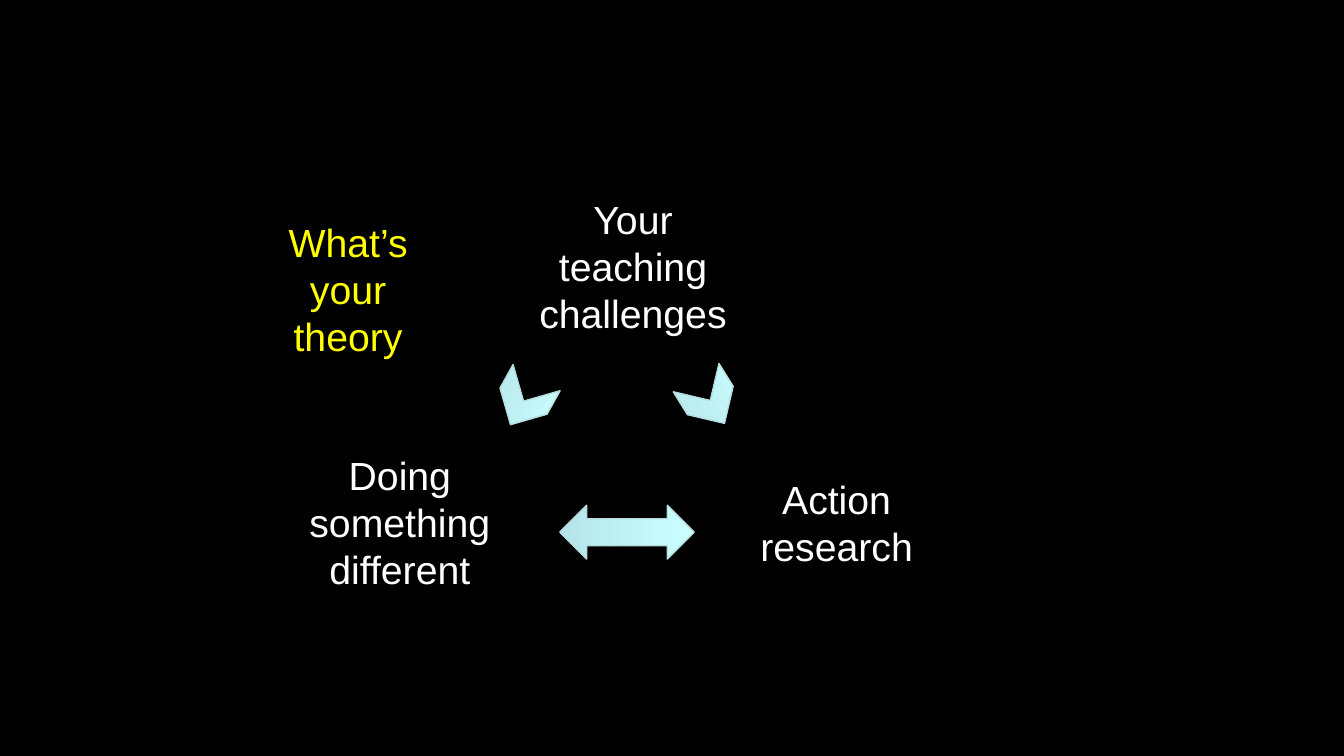
from pptx import Presentation
from pptx import util as u
from pptx.dml.color import RGBColor
from pptx.enum import shapes, text

PX = 4572  # EMU per px, 200 px to the inch

THEME = {
    "background": RGBColor.from_string("000000"),
    "body": RGBColor.from_string("FFFFFF"),
    "accent": RGBColor.from_string("FFFF00"),
    "arrow_stops": [RGBColor.from_string(c) for c in ("CBFFFF", "B5E5E9")],
    "arrow_edge": RGBColor.from_string("B6DCDF"),
    "font": "Arial",
    "size": u.Pt(21),
    "edge_width": u.Pt(0.75),
}

prs = Presentation()
prs.slide_width, prs.slide_height = 2000 * PX, 1125 * PX
slide = prs.slides.add_slide(prs.slide_layouts[6])
slide.background.fill.solid()
slide.background.fill.fore_color.rgb = THEME["background"]

# Arrows between the ideas: preset, left, top, width, height, rotation
arrows = [
    (shapes.MSO_SHAPE.UP_DOWN_ARROW, 893, 692, 80, 200, 90),
    (shapes.MSO_SHAPE.CHEVRON, 739, 557, 80, 80, 119),
    (shapes.MSO_SHAPE.CHEVRON, 1017, 556, 80, 80, 58.2),
]
for preset, left, top, width, height, rotation in arrows:
    arrow = slide.shapes.add_shape(preset, left * PX, top * PX, width * PX, height * PX)
    arrow.rotation = rotation
    arrow.shadow.inherit = False
    arrow.fill.gradient()
    arrow.fill.gradient_angle = 270
    for position, (stop, color) in enumerate(zip(arrow.fill.gradient_stops, THEME["arrow_stops"])):
        stop.position = position
        stop.color.rgb = color
    arrow.line.color.rgb = THEME["arrow_edge"]
    arrow.line.width = THEME["edge_width"]

# Ideas: paragraphs, left, top, width, height, colour
ideas = [
    (["Doing something different"], 435, 662, 320, 232, "body"),
    (["Action", "research"], 1106, 698, 278, 162, "body"),
    (["Your teaching challenges"], 778, 281, 328, 232, "body"),
    (["What’s your theory"], 399, 315, 238, 232, "accent"),
]
font_format = {"name": THEME["font"], "size": THEME["size"]}
for lines, left, top, width, height, color in ideas:
    idea = slide.shapes.add_textbox(left * PX, top * PX, width * PX, height * PX)
    frame = idea.text_frame
    frame.word_wrap = True
    frame.auto_size = text.MSO_AUTO_SIZE.SHAPE_TO_FIT_TEXT
    frame.text = "\n".join(lines)
    for paragraph in frame.paragraphs:
        paragraph.alignment = text.PP_ALIGN.CENTER
        font = paragraph.runs[0].font
        for attribute, value in font_format.items():
            setattr(font, attribute, value)
        font.color.rgb = THEME[color]

prs.save("out.pptx")
